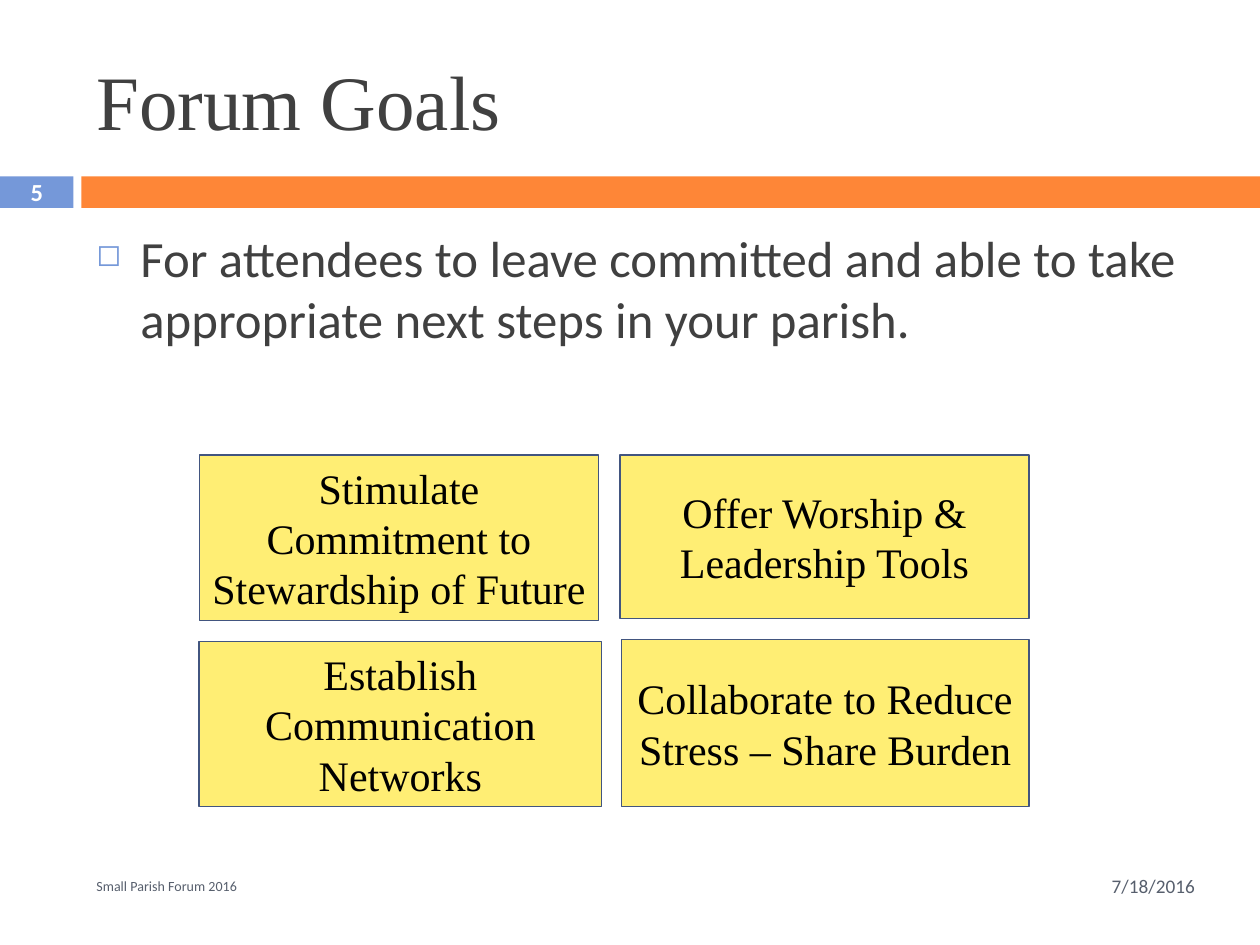
from dataclasses import dataclass

from lxml.etree import SubElement
from pptx import Presentation
from pptx.dml.color import RGBColor
from pptx.enum.shapes import MSO_SHAPE as Shape
from pptx.enum.text import MSO_ANCHOR as Anchor, PP_ALIGN as Align
from pptx.oxml.ns import qn
from pptx.util import Pt


@dataclass(frozen=True)
class Theme:
    heading_font: str = "Times New Roman"
    body_font: str = "Calibri"
    ink: str = "404040"
    muted: str = "575F6D"
    white: str = "FFFFFF"
    black: str = "000000"
    blue: str = "7598D9"
    orange: str = "FE8637"
    yellow: str = "FFEE74"
    outline: str = "42557F"
    title_size: float = 44
    body_size: float = 29
    card_size: float = 24
    number_size: float = 14
    date_size: float = 11
    footer_size: float = 8


THEME = Theme()
MARGIN = 48
CONTENT_WIDTH = 642

# Goal cards: text, left, top, width, height
GOALS = [
    ("Stimulate Commitment to Stewardship of Future", 113.8, 260, 228.4, 94.5),
    ("Offer Worship & Leadership Tools", 354.3, 260, 233.7, 93.5),
    ("Establish Communication Networks", 113.8, 366.6, 230, 94.2),
    ("Collaborate to Reduce Stress – Share Burden", 355, 365.6, 233, 95.2),
]


def write(shape, text, font, size, color, align=Align.LEFT, anchor=Anchor.MIDDLE, bold=False):
    frame = shape.text_frame
    frame.text = text
    frame.word_wrap = True
    frame.vertical_anchor = anchor
    para = frame.paragraphs[0]
    para.alignment = align
    span = para.runs[0].font
    span.name, span.size, span.bold = font, Pt(size), bold
    span.color.rgb = RGBColor.from_string(color)
    return para


def add_label(page, place, *style, **options):
    box = page.shapes.add_textbox(*map(Pt, place))
    return write(box, *style, **options)


def add_block(page, place, fill, line=None):
    block = page.shapes.add_shape(Shape.RECTANGLE, *map(Pt, place))
    block.shadow.inherit = False
    block.fill.solid()
    block.fill.fore_color.rgb = RGBColor.from_string(fill)
    if line:
        block.line.color.rgb = RGBColor.from_string(line)
        block.line.width = Pt(0.75)
    else:
        block.line.fill.background()
    return block


def add_bullet(para, symbol, color, percent, indent):
    props = para._p.get_or_add_pPr()
    props.set("marL", str(Pt(indent)))
    props.set("indent", str(-Pt(indent)))
    bullet_color = SubElement(props, qn("a:buClr"))
    SubElement(bullet_color, qn("a:srgbClr"), val=color)
    SubElement(props, qn("a:buSzPct"), val=str(percent * 1000))
    SubElement(props, qn("a:buChar"), char=symbol)


def main():
    deck = Presentation()
    deck.slide_width, deck.slide_height = Pt(720), Pt(540)
    page = deck.slides.add_slide(deck.slide_layouts[6])

    # Title and divider band with the slide number
    add_label(page, (MARGIN, 18, CONTENT_WIDTH, 78), "Forum Goals",
              THEME.heading_font, THEME.title_size, THEME.ink)
    number = add_block(page, (0, 100.8, 42, 18), THEME.blue)
    write(number, "5", THEME.body_font, THEME.number_size, THEME.white,
          align=Align.CENTER, bold=True)
    add_block(page, (46.5, 100.8, 673.5, 18), THEME.orange)

    # Main statement
    statement = add_label(
        page, (MARGIN, 126, CONTENT_WIDTH, 354),
        "For attendees to leave committed and able to take appropriate next steps in your parish.",
        THEME.body_font, THEME.body_size, THEME.ink, anchor=Anchor.TOP)
    statement.space_before = Pt(7)
    add_bullet(statement, "◻", THEME.blue, 60, 25.2)

    # Goal cards
    for text, *place in GOALS:
        card = add_block(page, place, THEME.yellow, THEME.outline)
        write(card, text, THEME.heading_font, THEME.card_size, THEME.black, align=Align.CENTER)

    # Footer
    add_label(page, (MARGIN, 492, 552, 28.8), "Small Parish Forum 2016",
              THEME.body_font, THEME.footer_size, THEME.muted)
    add_label(page, (612, 492, 78, 28.8), "7/18/2016",
              THEME.body_font, THEME.date_size, THEME.muted, align=Align.RIGHT)

    deck.save("out.pptx")


if __name__ == "__main__":
    main()
